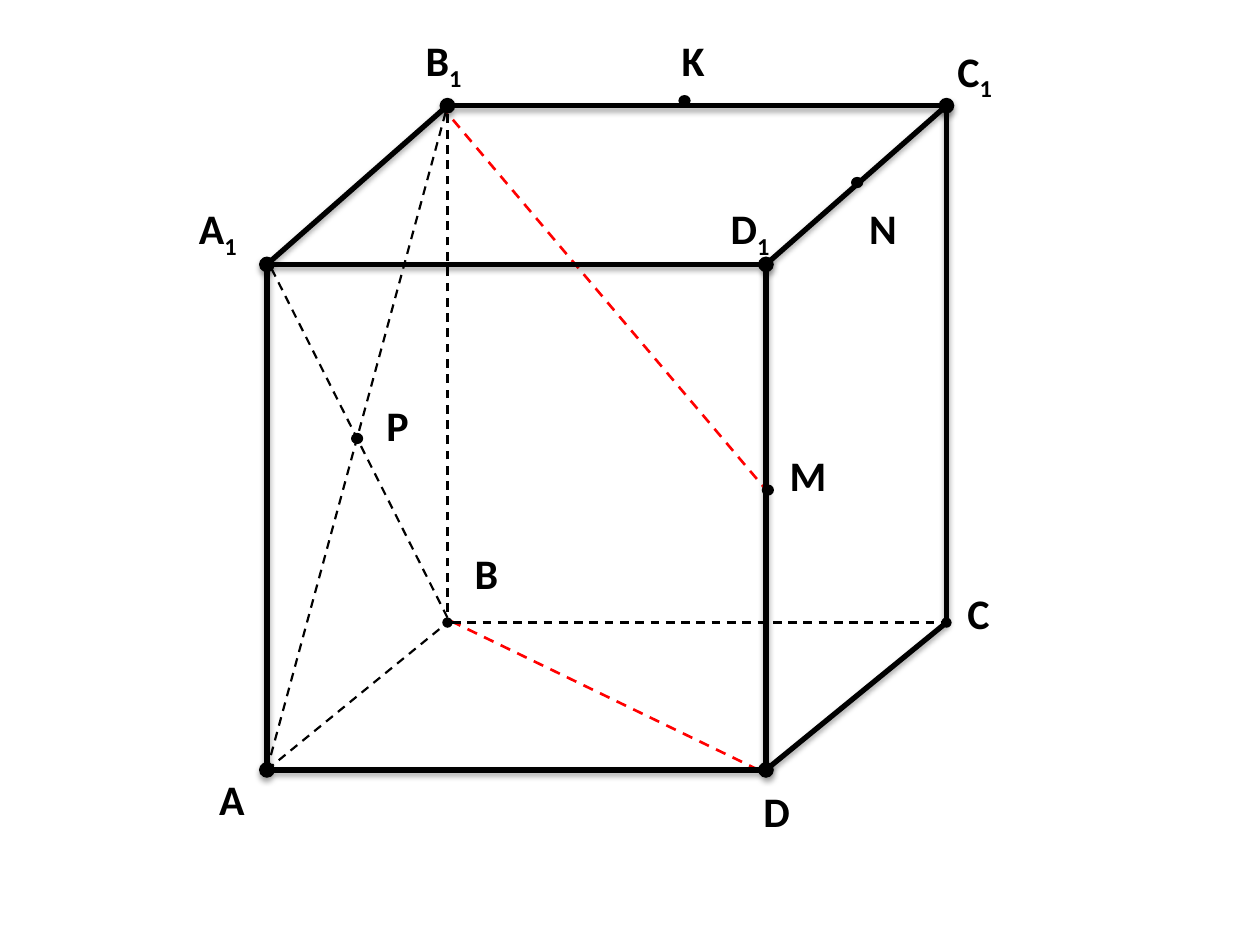
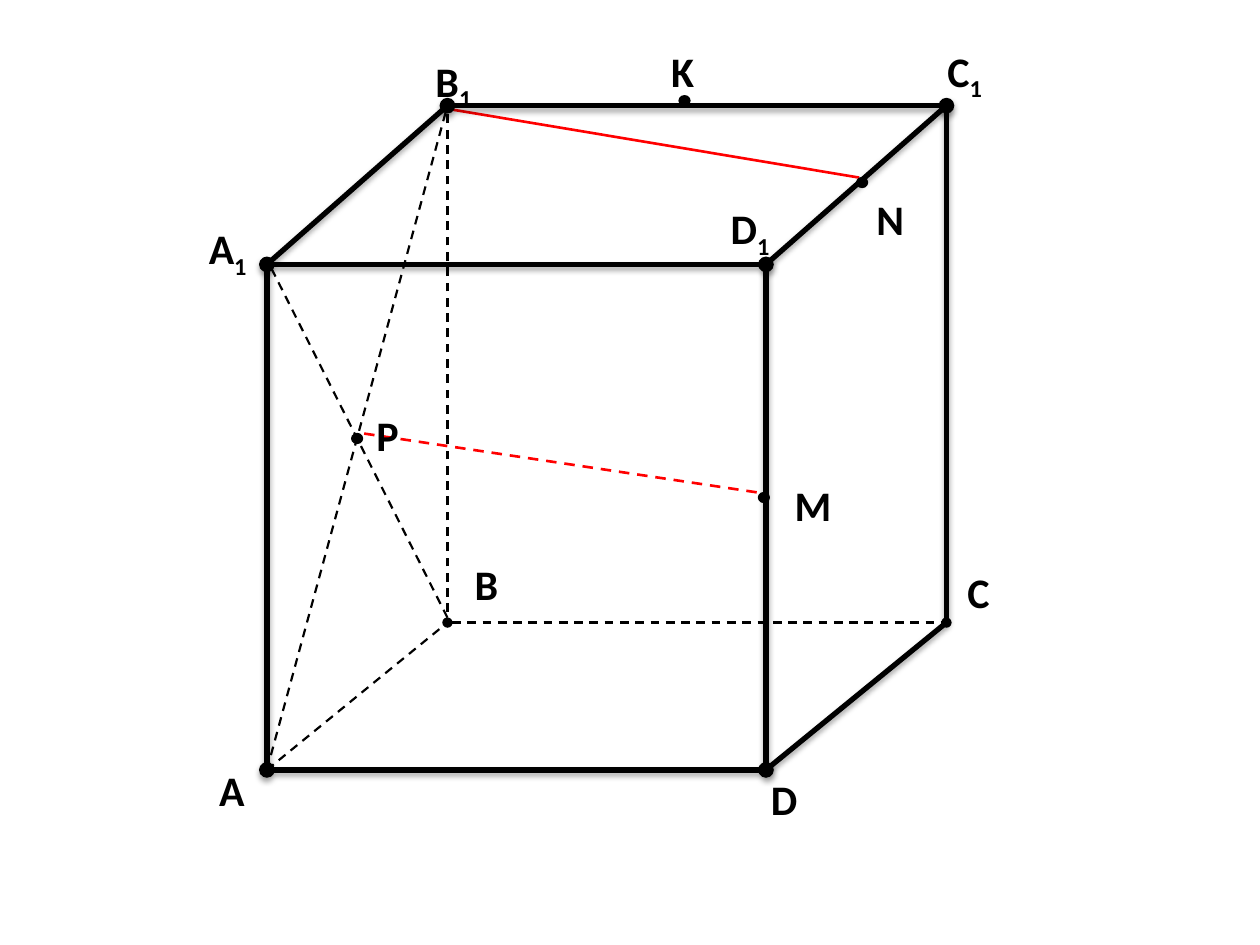
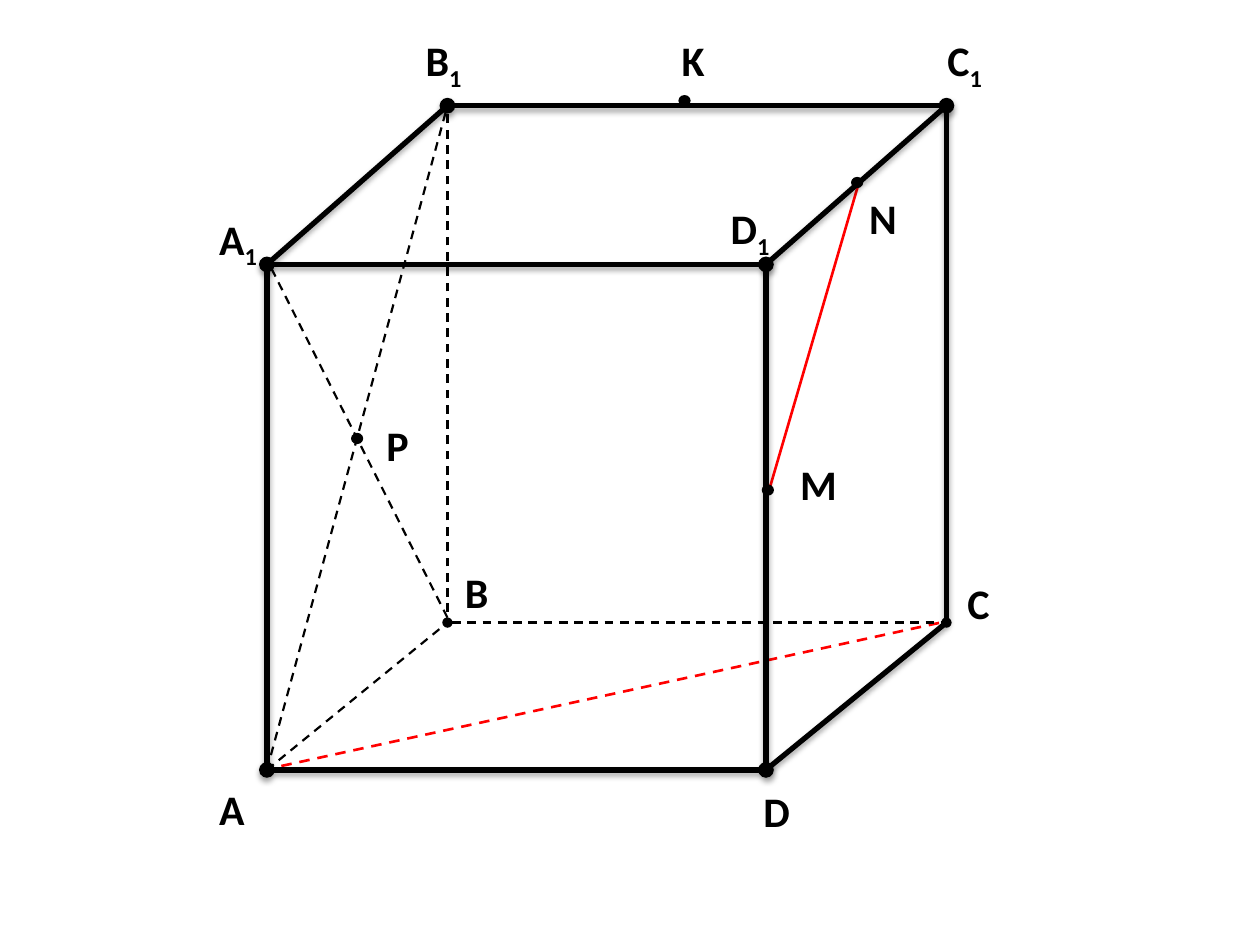
from lxml.etree import SubElement
from pptx import Presentation
from pptx.dml.color import RGBColor
from pptx.enum.dml import MSO_LINE
from pptx.enum.shapes import MSO_CONNECTOR, MSO_SHAPE
from pptx.enum.text import MSO_AUTO_SIZE
from pptx.oxml.ns import qn
from pptx.util import Cm, Pt

COLORS = {"ink": "000000", "mark": "FF0000"}
FONT = "Calibri"

NODES = {
    "A": (5.38, 15.52), "B": (9.02, 12.55), "C": (19.08, 12.55), "D": (15.44, 15.52),
    "A1": (5.38, 5.33), "B1": (9.02, 2.13), "C1": (19.08, 2.13), "D1": (15.44, 5.33),
}
EDGES = [
    ("A", "A1", False), ("A", "D", True), ("D", "D1", False),
    ("A1", "D1", True), ("A1", "B1", False), ("D", "C", False),
    ("D1", "C1", False), ("C", "C1", False), ("B1", "C1", True),
]
HIDDEN = [
    (NODES["A"], NODES["B"], False),
    ((9.02, 12.34), NODES["B1"], False),
    (NODES["B"], NODES["C"], True),
    (NODES["A"], NODES["B1"], False),
    ((9.02, 12.45), (5.38, 5.23), False),
]
DOTS = {"M": (15.37, 9.78), "N": (17.17, 3.58), "P": (7.09, 8.74), "K": (13.69, 1.93)}
LABELS = {
    "A": (4.17, 15.47), "B1": (8.33, 0.58), "A1": (3.76, 3.96), "P": (7.54, 7.92),
    "C": (19.25, 11.71), "B": (9.32, 10.92), "D": (15.14, 15.72), "D1": (14.48, 3.96),
    "M": (15.67, 8.94), "N": (17.27, 3.96), "K": (13.49, 0.58), "C1": (19.05, 0.79),
}
WIDTHS = {"A1": 1.5, "B1": 1.98, "C1": 1.37, "D1": 1.4}

SLIDES = [
    {
        "marks": [((9.09, 12.52), (15.29, 15.52), True), ((8.89, 2.13), (15.49, 9.93), True)],
        "dots": {},
        "labels": {},
    },
    {
        "marks": [((7.34, 8.74), (15.29, 9.93), True), ((8.94, 2.18), (17.32, 3.58), False)],
        "dots": {"M": (15.29, 9.93), "N": (17.27, 3.58)},
        "labels": {
            "A": (4.17, 15.29), "B1": (8.53, 0.99), "A1": (3.96, 4.37), "P": (7.34, 8.13),
            "C": (19.25, 11.3), "B": (9.32, 11.13), "D": (15.29, 15.47), "M": (15.77, 9.55),
            "N": (17.42, 3.78), "K": (13.28, 0.79), "C1": (18.85, 0.79),
        },
    },
    {
        "marks": [((5.31, 15.52), (19.1, 12.52), True), ((15.49, 9.93), (17.3, 3.73), False)],
        "dots": {},
        "labels": {
            "A": (4.17, 15.67), "A1": (4.17, 4.17), "P": (7.54, 8.33), "C": (19.25, 11.51),
            "B": (9.12, 11.3), "M": (15.88, 9.12), "N": (17.27, 3.76), "C1": (18.85, 0.58),
        },
    },
]


def color(name):
    return RGBColor.from_string(COLORS[name])


def add_shade(effects):
    shade = SubElement(effects, qn("a:outerShdw"), blurRad="40000", dist="23000",
                       dir="5400000", rotWithShape="0")
    tint = SubElement(shade, qn("a:srgbClr"), val=COLORS["ink"])
    SubElement(tint, qn("a:alpha"), val="35000")


def add_line(slide, start, end, hue, width, dash=False, ends=False, shade=False):
    points = [Cm(value) for value in (*start, *end)]
    link = slide.shapes.add_connector(MSO_CONNECTOR.STRAIGHT, *points)
    link.line.color.rgb = color(hue)
    link.line.width = Pt(width)
    if dash:
        link.line.dash_style = MSO_LINE.DASH
    props = link._element.spPr
    if ends:
        for tag in ("a:headEnd", "a:tailEnd"):
            SubElement(props.find(qn("a:ln")), qn(tag), type="oval")
    effects = SubElement(props, qn("a:effectLst"))
    if shade:
        add_shade(effects)


def add_dot(slide, left, top):
    dot = slide.shapes.add_shape(MSO_SHAPE.FLOWCHART_CONNECTOR,
                                 Cm(left), Cm(top), Cm(0.22), Cm(0.2))
    dot.shadow.inherit = False
    dot.fill.solid()
    dot.fill.fore_color.rgb = color("ink")
    dot.line.color.rgb = color("ink")
    dot.line.width = Pt(0.75)


def add_label(slide, name, left, top):
    box = slide.shapes.add_textbox(Cm(left), Cm(top), Cm(WIDTHS.get(name, 1.04)), Cm(1.3))
    frame = box.text_frame
    frame.word_wrap = True
    frame.auto_size = MSO_AUTO_SIZE.SHAPE_TO_FIT_TEXT
    para = frame.paragraphs[0]
    para.font.name = FONT
    para.font.size = Pt(24)
    para.font.bold = True
    para.font.color.rgb = color("ink")
    para.add_run().text = name[0]
    if name[1:]:
        index = para.add_run()
        index.text = name[1:]
        index.font._element.set("baseline", "-25000")


def add_cube(slide):
    for start, end, ends in EDGES:
        add_line(slide, NODES[start], NODES[end], "ink", 3, ends=ends, shade=True)
    for start, end, ends in HIDDEN:
        add_line(slide, start, end, "ink", 1.25, dash=True, ends=ends)


def main():
    deck = Presentation()
    deck.slide_width, deck.slide_height = Cm(25.4), Cm(19.05)
    for plan in SLIDES:
        slide = deck.slides.add_slide(deck.slide_layouts[6])
        for start, end, dash in plan["marks"]:
            add_line(slide, start, end, "mark", 1.5, dash=dash)
        add_cube(slide)
        for spot in (DOTS | plan["dots"]).values():
            add_dot(slide, *spot)
        for name, spot in (LABELS | plan["labels"]).items():
            add_label(slide, name, *spot)
    deck.save("out.pptx")


if __name__ == "__main__":
    main()
